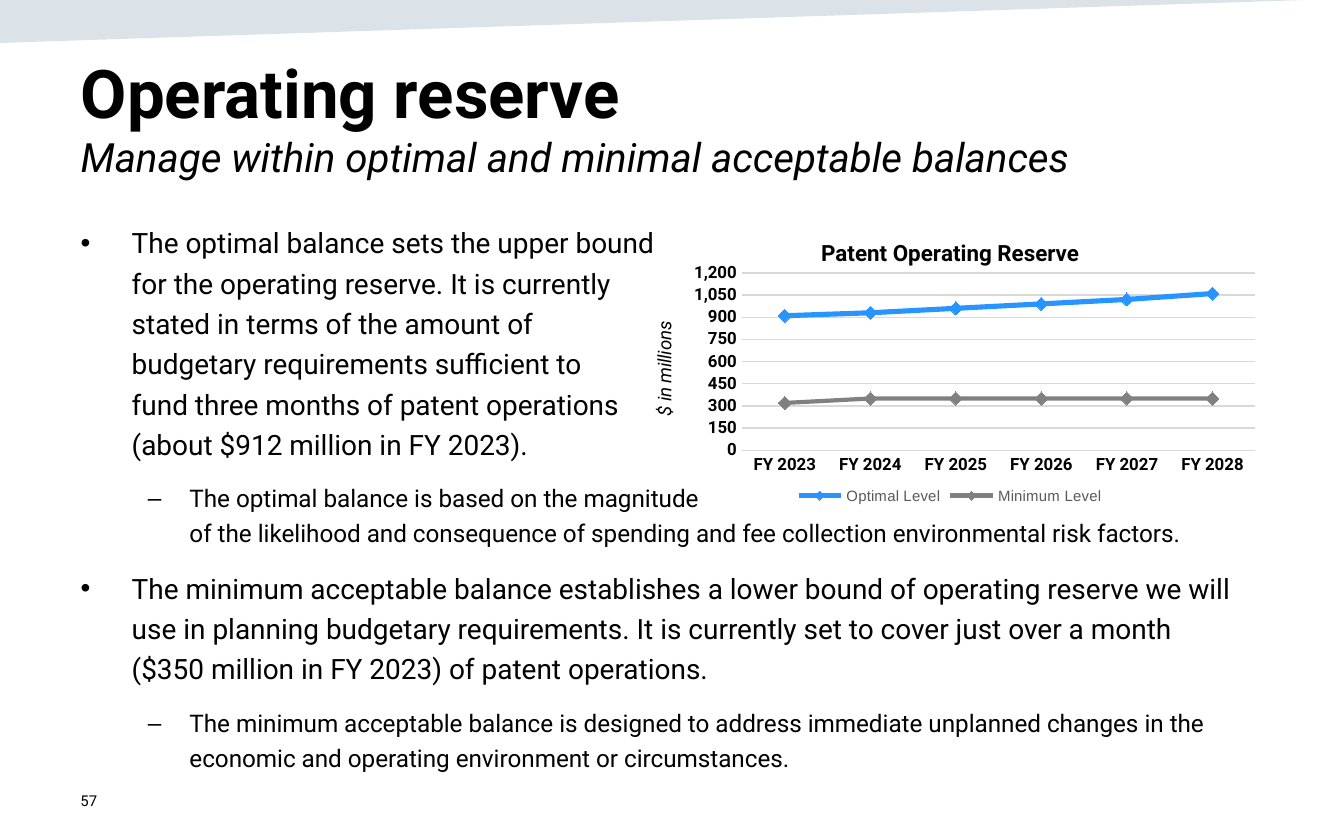
from copy import deepcopy
from dataclasses import dataclass

from lxml import etree
from pptx import Presentation
from pptx.chart.data import CategoryChartData
from pptx.dml.color import RGBColor
from pptx.enum.chart import XL_CHART_TYPE, XL_LEGEND_POSITION, XL_MARKER_STYLE, XL_TICK_MARK
from pptx.enum.text import MSO_ANCHOR, MSO_AUTO_SIZE, PP_ALIGN
from pptx.oxml import parse_xml
from pptx.oxml.ns import nsdecls, qn
from pptx.util import Inches, Pt

LINE_MARKERS = XL_CHART_TYPE.LINE_MARKERS
BOTTOM = XL_LEGEND_POSITION.BOTTOM
DIAMOND = XL_MARKER_STYLE.DIAMOND
NO_TICK = XL_TICK_MARK.NONE
LEFT = PP_ALIGN.LEFT
TOP, MIDDLE = MSO_ANCHOR.TOP, MSO_ANCHOR.MIDDLE
NO_FIT = MSO_AUTO_SIZE.NONE


@dataclass(frozen=True)
class Theme:
    font: str = "Roboto"
    chart_font: str = "Arial"
    text: str = "000000"
    band: str = "164469"
    grid: str = "D9D9D9"
    legend: str = "595959"
    optimal: str = "2894FF"
    minimum: str = "808080"
    title: float = 36
    subtitle: float = 21.6
    bullets: tuple = (15, 13)
    number: float = 8
    chart_title: float = 12
    chart_base: float = 10
    axis: float = 9


THEME = Theme()

# Per level: bullet character, left margin, hanging indent
LEVELS = (("•", 0.38, 0.38), ("–", 0.81, 0.31))

BULLETS = (
    (0, "The optimal balance sets the upper bound \vfor the operating reserve. It is currently \v"
        "stated in terms of the amount of \vbudgetary requirements sufficient to \v"
        "fund three months of patent operations \v(about $912 million in FY 2023)."),
    (1, "The optimal balance is based on the magnitude \vof the likelihood and consequence "
        "of spending and fee collection environmental risk factors."),
    (0, "The minimum acceptable balance establishes a lower bound of operating reserve we will "
        "use in planning budgetary requirements. It is currently set to cover just over a month \v"
        "($350 million in FY 2023) of patent operations."),
    (1, "The minimum acceptable balance is designed to address immediate unplanned changes in "
        "the economic and operating environment or circumstances."),
)

YEARS = [f"FY {year}" for year in range(2023, 2029)]
SERIES = (
    ("Optimal Level", (910, 930, 960, 990, 1020, 1060), THEME.optimal, 2.75),
    ("Minimum Level", (320, 350, 350, 350, 350, 350), THEME.minimum, 2.25),
)


def set_font(font, size, color=THEME.text, name=THEME.font, **flags):
    values = {"size": Pt(size), "name": name, "bold": False, "italic": False, **flags}
    for attr, value in values.items():
        setattr(font, attr, value)
    font.color.rgb = RGBColor.from_string(color)


def style_breaks(p):
    """Give each line break the format of the first run, so line heights stay even."""
    for br in p._p.findall(qn("a:br")):
        br.insert(0, deepcopy(p.runs[0]._r.rPr))


def place(sp, left, top, width, height, anchor):
    box = {"left": left, "top": top, "width": width, "height": height}
    for attr, value in box.items():
        setattr(sp, attr, Inches(value))
    tf = sp.text_frame
    for attr, value in {"word_wrap": True, "auto_size": NO_FIT, "vertical_anchor": anchor}.items():
        setattr(tf, attr, value)
    return tf


def add_band(slide):
    builder = slide.shapes.build_freeform(0, 0, scale=Inches(1) / 100)
    builder.add_line_segments([(0, 32), (1002, -1)], close=True)
    sp = builder.convert_to_shape()
    sp.shadow.inherit = False
    sp.line.fill.background()
    sp.fill.solid()
    sp.fill.fore_color.rgb = RGBColor.from_string(THEME.band)
    color = sp._element.spPr.find(qn("a:solidFill"))[0]
    etree.SubElement(color, qn("a:alpha"), val="15000")


def add_number(slide, number):
    sp = slide.shapes.add_textbox(0, 0, 0, 0)
    p = place(sp, 0.5, 5.79, 2.25, 0.33, MIDDLE).paragraphs[0]
    p.text = number
    set_font(p.runs[0].font, THEME.number)


def fill_title(sp, title, subtitle):
    p = place(sp, 0.5, 0.34, 9, 1.04, MIDDLE).paragraphs[0]
    p.alignment = LEFT
    p.text = f"{title}\v{subtitle}"
    set_font(p.runs[0].font, THEME.title, bold=True)
    set_font(p.runs[1].font, THEME.subtitle, italic=True)
    style_breaks(p)


def fill_bullets(sp, bullets):
    tf = place(sp, 0.5, 1.58, 9, 4.21, TOP)
    for i, (level, text) in enumerate(bullets):
        p = tf.add_paragraph() if i else tf.paragraphs[0]
        p.text = text
        for attr, value in {"level": level, "alignment": LEFT, "line_spacing": 1.2,
                            "space_before": Pt(9)}.items():
            setattr(p, attr, value)
        char, margin, hang = LEVELS[level]
        pPr = p._p.get_or_add_pPr()
        pPr.set("marL", str(Inches(margin)))
        pPr.set("indent", str(-Inches(hang)))
        etree.SubElement(pPr, qn("a:buChar"), char=char)
        for r in p.runs:
            set_font(r.font, THEME.bullets[level])
        style_breaks(p)


def set_chart_text(owner, text, size, **flags):
    """Title a chart or an axis."""
    p = owner.text_frame.paragraphs[0]
    p.text = text
    set_font(p.runs[0].font, size, **flags)


def set_plot_area(chart, x, y, w, h):
    area = chart._chartSpace.chart.plotArea
    for old in area.findall(qn("c:layout")):
        area.remove(old)
    sizes = "".join(f'<c:{tag} val="{val}"/>' for tag, val in zip("xywh", (x, y, w, h)))
    area.insert(0, parse_xml(
        f'<c:layout {nsdecls("c")}><c:manualLayout><c:layoutTarget val="inner"/>'
        f'<c:xMode val="edge"/><c:yMode val="edge"/>{sizes}</c:manualLayout></c:layout>'))


def set_line(line, color, width):
    line.color.rgb = RGBColor.from_string(color)
    line.width = Pt(width)


def format_axes(chart):
    category, value = chart.category_axis, chart.value_axis
    for axis in (category, value):
        axis.major_tick_mark = axis.minor_tick_mark = NO_TICK
        set_font(axis.tick_labels.font, THEME.axis, bold=True)
    set_line(category.format.line, THEME.grid, 0.75)
    for attr, val in {"minimum_scale": 0, "maximum_scale": 1250, "major_unit": 150,
                      "has_major_gridlines": True}.items():
        setattr(value, attr, val)
    set_line(value.major_gridlines.format.line, THEME.grid, 0.75)
    value.format.line.fill.background()
    value.tick_labels.number_format = "#,##0"
    value.tick_labels.number_format_is_linked = False
    set_chart_text(value.axis_title, "$ in millions", THEME.chart_base, italic=True)


def add_reserve_chart(slide):
    data = CategoryChartData(number_format="#,##0")
    data.categories = YEARS
    for name, values, _, _ in SERIES:
        data.add_series(name, values)
    box = [Inches(n) for n in (4.65, 1.64, 4.84, 2.15)]
    chart = slide.shapes.add_chart(LINE_MARKERS, *box, data).chart
    set_font(chart.font, THEME.chart_base, name=THEME.chart_font)
    set_chart_text(chart.chart_title, "Patent Operating Reserve", THEME.chart_title, bold=True)
    chart.has_legend = True
    chart.legend.position = BOTTOM
    chart.legend.include_in_layout = False
    set_font(chart.legend.font, THEME.number, THEME.legend, THEME.chart_font)
    format_axes(chart)
    set_plot_area(chart, 0.18, 0.156, 0.789, 0.64)
    chart.plots[0].vary_by_categories = False
    for series, (_, _, color, width) in zip(chart.plots[0].series, SERIES):
        series.smooth = False
        set_line(series.format.line, color, width)
        marker = series.marker
        marker.style, marker.size = DIAMOND, 7
        marker.format.fill.solid()
        marker.format.fill.fore_color.rgb = RGBColor.from_string(color)
        set_line(marker.format.line, color, 0.75)


def main():
    prs = Presentation()
    prs.slide_width, prs.slide_height = Inches(10), Inches(6.25)
    slide = prs.slides.add_slide(prs.slide_layouts[1])
    add_band(slide)
    add_number(slide, "57")
    fill_title(slide.shapes.title, "Operating reserve",
               "Manage within optimal and minimal acceptable balances")
    fill_bullets(slide.placeholders[1], BULLETS)
    add_reserve_chart(slide)
    prs.save("out.pptx")


if __name__ == "__main__":
    main()
